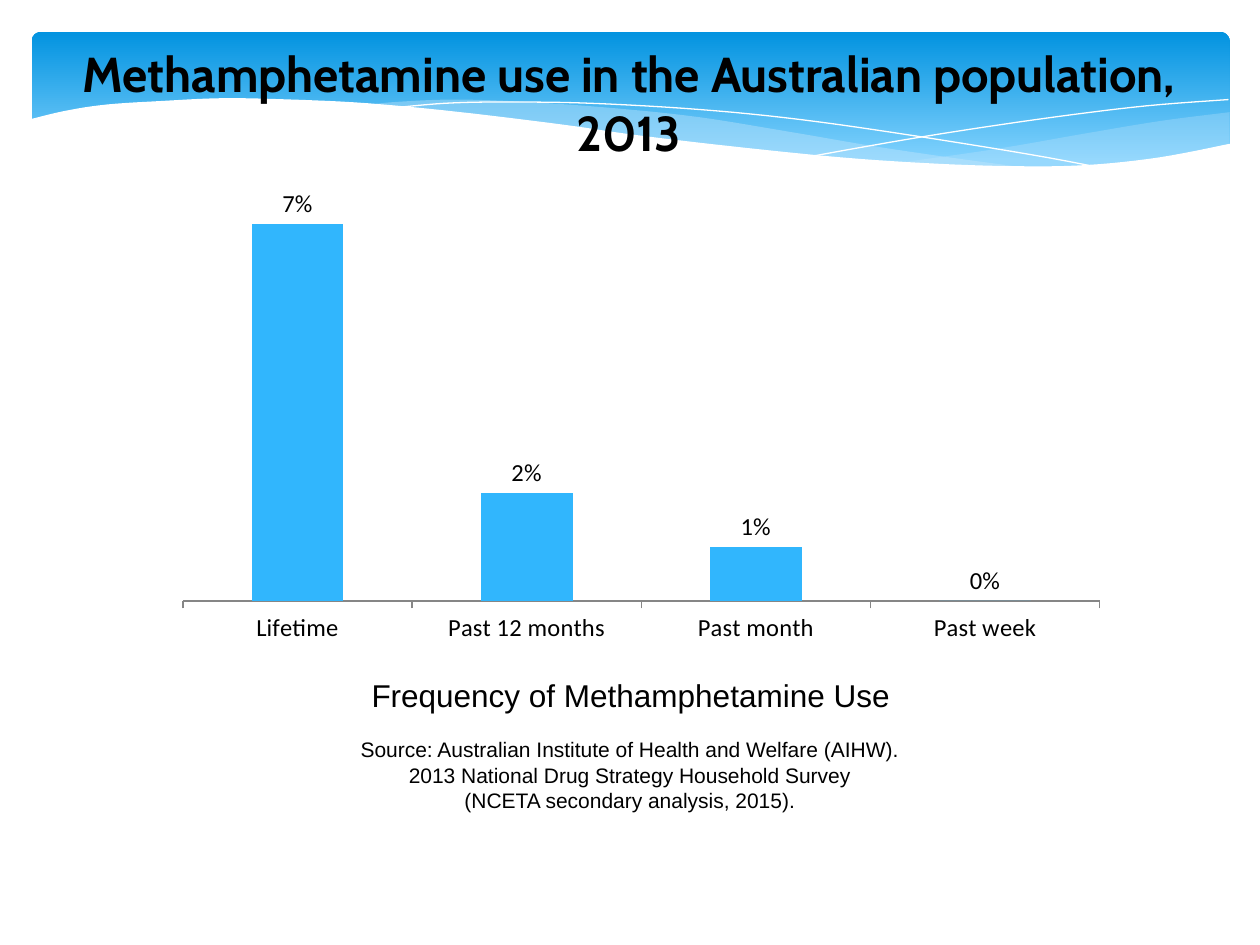
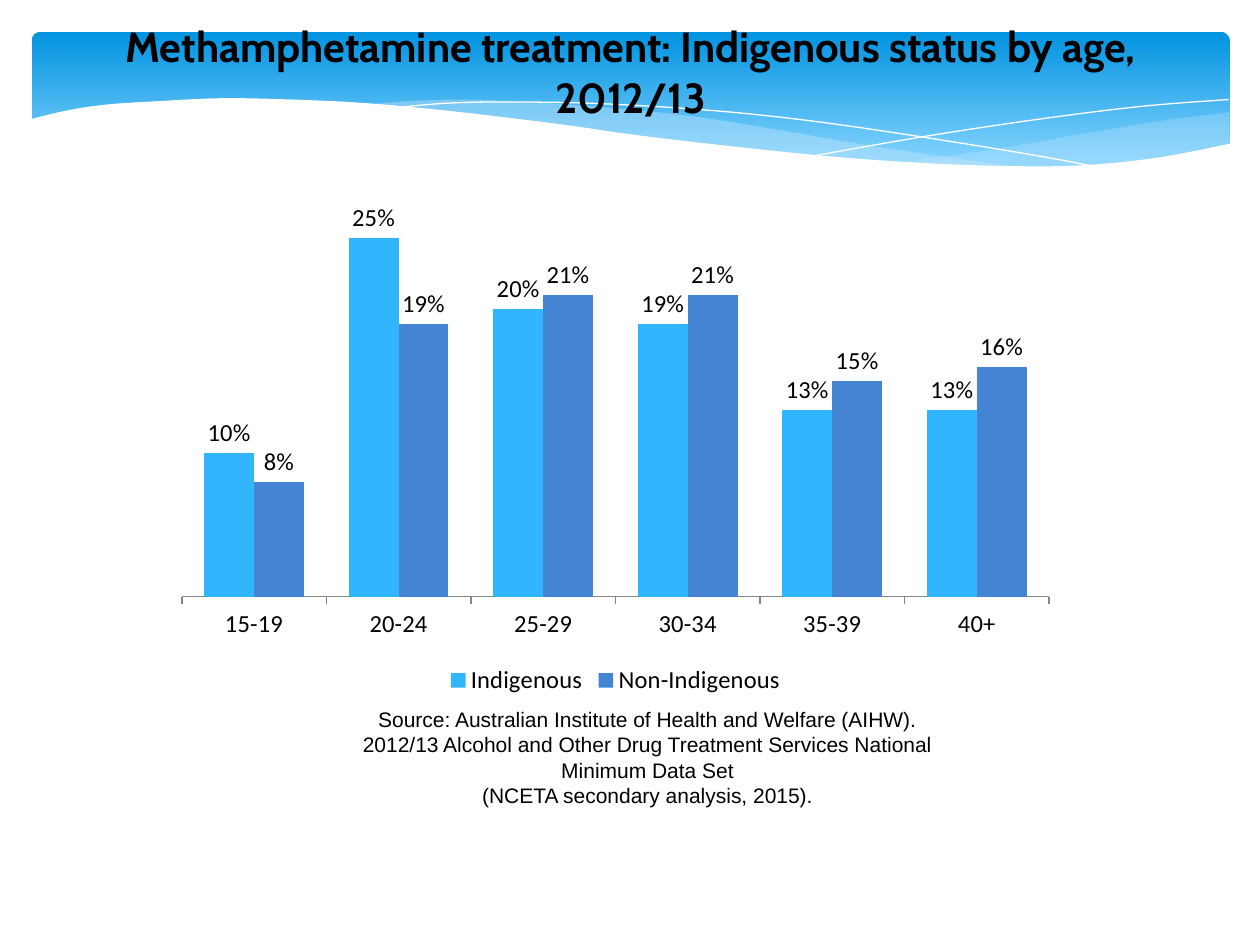
from pptx import Presentation
from pptx.chart.data import CategoryChartData
from pptx.dml.color import RGBColor
from pptx.enum.chart import XL_CHART_TYPE as ChartType
from pptx.enum.chart import XL_LABEL_POSITION as LabelPosition
from pptx.enum.chart import XL_LEGEND_POSITION as LegendPosition
from pptx.enum.chart import XL_TICK_MARK as TickMark
from pptx.enum.shapes import MSO_SHAPE as Preset
from pptx.enum.text import MSO_ANCHOR as Anchor
from pptx.enum.text import MSO_AUTO_SIZE as AutoSize
from pptx.enum.text import PP_ALIGN as Align
from pptx.oxml import parse_xml
from pptx.oxml.ns import nsdecls
from pptx.oxml.xmlchemy import OxmlElement
from pptx.util import Inches, Pt

COLOURS = {
    "text": "000000",
    "paper": "FFFFFF",
    "band_top": "0293E0",
    "band_bottom": "83D3FE",
    "wave": "C6E7FC",
    "axis": "868686",
    "sky": "31B6FD",
    "blue": "4584D3",
}
BAND_BOX = (0.25, 0.25, 9.51, 1.15)

FAR_WAVE = [
    [(9.51, 0.64), (8.96, 0.71), (8.36, 0.81), (7.54, 0.95), (6.36, 1.11)],
    [(6.36, 1.11), (6.93, 1.16), (7.56, 1.19), (7.99, 1.19), (8.56, 1.16),
     (9.1, 1.08), (9.51, 0.98)],
]
NEAR_WAVE = [
    [(8.68, 1.16), (7.82, 1.07), (6.81, 0.93), (6.04, 0.8), (5.3, 0.68),
     (4.64, 0.61), (3.95, 0.56), (3.36, 0.54), (2.88, 0.56), (2.61, 0.59)],
    [(2.61, 0.59), (3.37, 0.67), (4.24, 0.8), (5.05, 0.93), (5.93, 1.06),
     (6.84, 1.16), (7.6, 1.2), (8.13, 1.2), (8.68, 1.16)],
]
FALLING_LINE = [
    [(2.84, 0.61), (3.28, 0.57), (3.76, 0.56), (4.44, 0.57), (5.31, 0.62),
     (6.11, 0.7), (7.02, 0.83), (8.06, 1.0), (8.82, 1.15)],
]
RISING_LINE = [
    [(5.88, 1.05), (6.47, 0.94), (7.23, 0.81), (8.11, 0.68), (8.85, 0.59),
     (9.5, 0.54)],
]
PAPER_WAVE = [
    [(9.52, 0.89), (8.95, 1.0), (8.38, 1.06), (7.84, 1.07), (7.19, 1.05),
     (6.43, 1.0), (5.54, 0.91), (4.78, 0.82), (4.22, 0.74), (3.4, 0.64),
     (2.67, 0.57), (2.05, 0.54), (1.52, 0.53), (1.07, 0.55), (0.6, 0.58),
     (0.27, 0.63), (-0.02, 0.7)],
    [(-0.02, 1.37)],
    [(9.52, 1.37)],
]


def colour(name):
    return RGBColor.from_string(COLOURS[name])


def inches(box):
    return [Inches(length) for length in box]


def write(frame, text, size, font="Arial", bold=False, anchor=Anchor.TOP):
    frame.word_wrap = True
    frame.auto_size = AutoSize.NONE
    frame.vertical_anchor = anchor
    frame.text = text
    for paragraph in frame.paragraphs:
        paragraph.alignment = Align.CENTER
        paragraph.font.size = Pt(size)
        paragraph.font.name = font
        paragraph.font.bold = bold
        paragraph.font.color.rgb = colour("text")


def add_text(slide, box, text, size):
    write(slide.shapes.add_textbox(*inches(box)).text_frame, text, size)


def smooth(knots, steps=6):
    points = [knots[0]]
    padded = [knots[0], *knots, knots[-1]]
    for a, b, c, d in zip(padded, padded[1:], padded[2:], padded[3:]):
        for step in range(1, steps + 1):
            t = step / steps
            points.append(tuple(
                (2 * q + (r - p) * t + (2 * p - 5 * q + 4 * r - s) * t ** 2
                 + (3 * q - p - 3 * r + s) * t ** 3) / 2
                for p, q, r, s in zip(a, b, c, d)))
    return points


def add_wave(slide, box, curves, fill=None, opacity=100):
    left, top = box[:2]
    points = [(Inches(left + x), Inches(top + y))
              for knots in curves for x, y in smooth(knots)]
    builder = slide.shapes.build_freeform(*points[0])
    builder.add_line_segments(points[1:], close=fill is not None)
    wave = builder.convert_to_shape()
    wave.shadow.inherit = False
    if fill is None:
        wave.fill.background()
        wave.line.color.rgb = colour("paper")
        wave.line.width = Pt(0)
        return wave
    wave.line.fill.background()
    wave.fill.solid()
    wave.fill.fore_color.rgb = colour(fill)
    if opacity < 100:
        alpha = OxmlElement("a:alpha")
        alpha.set("val", str(opacity * 1000))
        wave.element.spPr.find(".//" + "{*}srgbClr").append(alpha)
    return wave


def add_band(slide, box):
    panel = slide.shapes.add_shape(Preset.ROUNDED_RECTANGLE, *inches(box))
    panel.adjustments[0] = 0.07
    panel.shadow.inherit = False
    panel.line.fill.background()
    panel.fill.gradient()
    panel.fill.gradient_angle = 270
    stops = zip(panel.fill.gradient_stops, ("band_top", "band_bottom"), (0, 0.9))
    for stop, name, position in stops:
        stop.color.rgb = colour(name)
        stop.position = position
    return [
        panel,
        add_wave(slide, box, FAR_WAVE, "wave", 29),
        add_wave(slide, box, NEAR_WAVE, "wave", 40),
        add_wave(slide, box, FALLING_LINE),
        add_wave(slide, box, RISING_LINE),
        add_wave(slide, box, PAPER_WAVE, "paper"),
    ]


def share_band(slide, layout):
    for placeholder in list(layout.placeholders)[1:]:
        layout.shapes.element.remove(placeholder.element)
    for part in add_band(slide, BAND_BOX):
        layout.shapes.element.append(part.element)


def set_title(slide, box, text, size):
    title = slide.shapes.title
    title.left, title.top, title.width, title.height = inches(box)
    write(title.text_frame, text, size, font="Cabin", bold=True,
          anchor=Anchor.MIDDLE)


def set_plot_box(chart, box):
    plot_area = chart.element.xpath("c:chart/c:plotArea")[0]
    for layout in plot_area.xpath("c:layout"):
        plot_area.remove(layout)
    places = "".join(f'<c:{key} val="{value}"/>'
                     for key, value in zip("xywh", box))
    plot_area.insert(0, parse_xml(
        f'<c:layout {nsdecls("c")}><c:manualLayout>'
        '<c:layoutTarget val="inner"/><c:xMode val="edge"/>'
        f'<c:yMode val="edge"/>{places}</c:manualLayout></c:layout>'))


def add_column_chart(slide, box, categories, series, top_value, plot_box,
                     gap, overlap=0, legend=False):
    data = CategoryChartData(number_format="0%")
    data.categories = categories
    for name, values, _ in series:
        data.add_series(name, values)
    chart = slide.shapes.add_chart(
        ChartType.COLUMN_CLUSTERED, *inches(box), data).chart
    chart.has_title = False
    chart.font.size = Pt(14)
    chart.font.name = "Calibri"
    chart.font.color.rgb = colour("text")
    chart.has_legend = legend
    if legend:
        chart.legend.position = LegendPosition.BOTTOM
        chart.legend.include_in_layout = False

    chart.value_axis.visible = False
    chart.value_axis.has_major_gridlines = False
    chart.value_axis.minimum_scale = 0
    chart.value_axis.maximum_scale = top_value
    chart.category_axis.major_tick_mark = TickMark.OUTSIDE
    chart.category_axis.format.line.color.rgb = colour("axis")

    plot = chart.plots[0]
    plot.gap_width = gap
    plot.overlap = overlap
    plot.vary_by_categories = False
    plot.has_data_labels = True
    plot.data_labels.show_value = True
    plot.data_labels.number_format = "0%"
    plot.data_labels.number_format_is_linked = False
    plot.data_labels.position = LabelPosition.OUTSIDE_END
    for columns, (_, _, fill) in zip(plot.series, series):
        columns.format.fill.solid()
        columns.format.fill.fore_color.rgb = colour(fill)
    set_plot_box(chart, plot_box)


def build_population_slide(slide):
    set_title(slide, (0.49, 0.54, 9, 0.55),
              "Methamphetamine use in the Australian population, 2013", 28)
    add_text(slide, (2.25, 5.8, 5.5, 0.71),
             "Source: Australian Institute of Health and Welfare (AIHW).\v"
             "2013 National Drug Strategy Household Survey\v"
             "(NCETA secondary analysis, 2015).", 12)
    add_text(slide, (2.72, 5.32, 4.57, 0.4),
             "Frequency of Methamphetamine Use", 18)
    add_column_chart(
        slide, (1.3, 1.31, 7.58, 4.22),
        ["Lifetime", "Past 12 months", "Past month", "Past week"],
        [("Series 1", [0.07, 0.02, 0.01, 0], "sky")],
        top_value=0.08, plot_box=(0.02, 0.01, 0.96, 0.81),
        gap=150, overlap=-25)


def build_treatment_slide(slide):
    set_title(slide, (0.28, 0.29, 9.45, 0.55),
              "Methamphetamine treatment: Indigenous status by age, 2012/13", 24)
    add_column_chart(
        slide, (1.3, 1.23, 7.17, 4.33),
        ["15-19", "20-24", "25-29", "30-34", "35-39", "40+"],
        [("Indigenous", [0.1, 0.25, 0.2, 0.19, 0.13, 0.13], "sky"),
         ("Non-Indigenous", [0.08, 0.19, 0.21, 0.21, 0.15, 0.16], "blue")],
        top_value=0.3, plot_box=(0.02, 0.02, 0.96, 0.79),
        gap=90, legend=True)
    add_text(slide, (2.64, 5.56, 5, 0.91),
             "Source: Australian Institute of Health and Welfare (AIHW).\v"
             "2012/13 Alcohol and Other Drug Treatment Services National "
             "Minimum Data Set\n(NCETA secondary analysis, 2015).", 12)


def main():
    deck = Presentation()
    deck.slide_width, deck.slide_height = Inches(10), Inches(7.5)
    layout = deck.slide_layouts.get_by_name("Title Only")
    population, treatment = (deck.slides.add_slide(layout) for _ in range(2))
    share_band(population, layout)
    build_population_slide(population)
    build_treatment_slide(treatment)
    deck.save("out.pptx")


if __name__ == "__main__":
    main()
